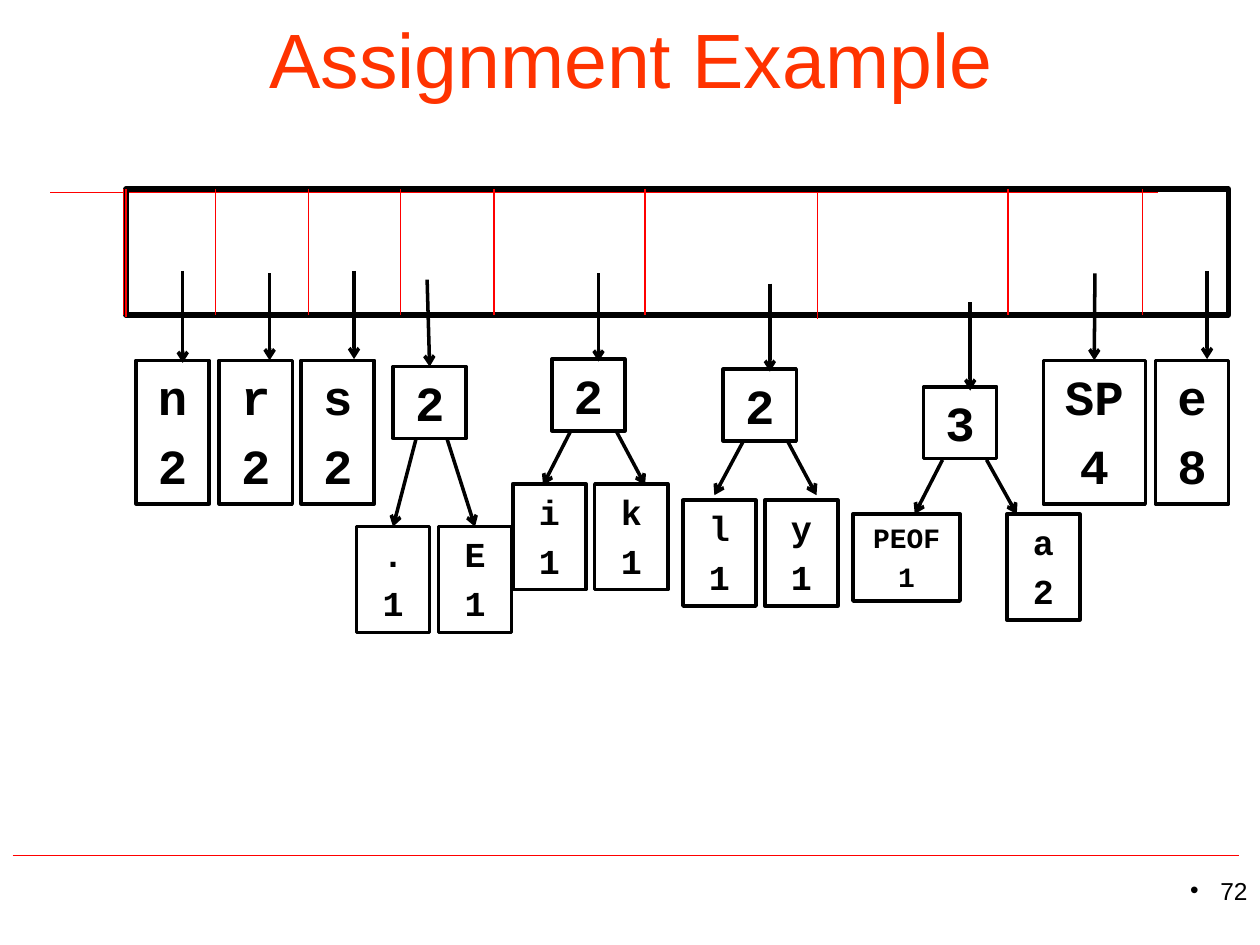
from lxml.etree import SubElement
from pptx import Presentation
from pptx.dml.color import RGBColor
from pptx.enum.shapes import MSO_CONNECTOR, MSO_SHAPE
from pptx.enum.text import MSO_ANCHOR, MSO_AUTO_SIZE, PP_ALIGN
from pptx.oxml.ns import qn
from pptx.util import Inches, Pt

COLORS = {"title": "FF3300", "rule": "FF0000", "ink": "000000"}
TITLE = "Assignment Example"
PAGE_NUMBER = "72"

RULES = [(0.4, 9.19, 1.53), (0.1, 9.83, 6.79)]  # left, right, y
QUEUE = (1, 1.5, 8.75, 1)
DIVIDERS = [(1, 1.5, 2.52), (6.49, 1.53, 2.53)] + [
    (x, 1.5, 2.5) for x in (0.98, 1.71, 2.45, 3.18, 3.92, 5.12, 8, 9.07)]

BOX_WIDTH = 0.58
WIDE_BOXES = {"SP": 0.81, "PEOF": 0.85}
ROOT_HEIGHT = 0.57
PAIR_HEIGHTS = {28: 1.14, 20: 0.84, 16: 0.69}  # by text size

# Queue entries: lines of text, left, top, arrow (x, start y, end y)
ENTRIES = [
    (("n", "2"), 1.08, 2.86, (1.45, 2.15, 2.88)),
    (("r", "2"), 1.74, 2.86, (2.14, 2.17, 2.86)),
    (("s", "2"), 2.39, 2.86, (2.81, 2.15, 2.85)),
    (("2",), 3.12, 2.91, (3.39, 2.22, 2.91)),
    (("2",), 4.38, 2.85, (4.75, 2.17, 2.87)),
    (("2",), 5.74, 2.93, (6.11, 2.25, 2.95)),
    (("3",), 7.33, 3.07, (7.7, 2.4, 3.1)),
    (("SP", "4"), 8.28, 2.86, (8.69, 2.17, 2.87)),
    (("e", "8"), 9.17, 2.86, (9.58, 2.15, 2.85)),
]
# Tree leaves: lines of text, left, top, text size, branch (x1, y1, x2, y2)
LEAVES = [
    ((".", "1"), 2.83, 4.18, 20, (3.3, 3.49, 3.12, 4.18)),
    (("E", "1"), 3.48, 4.18, 20, (3.55, 3.49, 3.79, 4.18)),
    (("i", "1"), 4.07, 3.84, 20, (4.53, 3.42, 4.31, 3.85)),
    (("k", "1"), 4.72, 3.84, 20, (4.89, 3.42, 5.12, 3.85)),
    (("l", "1"), 5.42, 3.97, 20, (5.9, 3.5, 5.67, 3.93)),
    (("y", "1"), 6.07, 3.97, 20, (6.25, 3.5, 6.48, 3.93)),
    (("PEOF", "1"), 6.77, 4.08, 16, (7.48, 3.65, 7.26, 4.08)),
    (("a", "2"), 7.99, 4.08, 20, (7.83, 3.65, 8.07, 4.08)),
]

prs = Presentation()
prs.slide_width, prs.slide_height = Inches(10), Inches(7.5)
slide = prs.slides.add_slide(prs.slide_layouts[6])


def color(name):
    return RGBColor.from_string(COLORS[name])


def format_paragraph(paragraph, align, size, font, ink="ink", bold=False):
    paragraph.alignment = align
    for run in paragraph.runs:
        run.font.size, run.font.name, run.font.bold = Pt(size), font, bold
        run.font.color.rgb = color(ink)


def add_line(x1, y1, x2, y2, ink="rule", width=0.75):
    line = slide.shapes.add_connector(
        MSO_CONNECTOR.STRAIGHT, *map(Inches, (x1, y1, x2, y2)))
    line.line.color.rgb = color(ink)
    line.line.width = Pt(width)
    SubElement(line._element.spPr, qn("a:effectLst"))
    return line


def add_arrow(x1, y1, x2, y2, target):
    """Draw an arrow, joined to the target if it ends at its top middle."""
    arrow = add_line(x1, y1, x2, y2, "ink", 2)
    SubElement(arrow.line._get_or_add_ln(), qn("a:tailEnd"), type="arrow")
    middle = target.left + target.width // 2
    if max(abs(Inches(x2) - middle), abs(Inches(y2) - target.top)) < Inches(0.03):
        arrow.end_connect(target, 0)


def add_frame(left, top, width, height, line_width):
    frame = slide.shapes.add_shape(
        MSO_SHAPE.RECTANGLE, *map(Inches, (left, top, width, height)))
    frame.shadow.inherit = False
    frame.fill.background()
    frame.line.color.rgb = color("ink")
    frame.line.width = Pt(line_width)
    return frame


def add_node(lines, left, top, size):
    width = WIDE_BOXES.get(lines[0], BOX_WIDTH)
    height = PAIR_HEIGHTS[size] if len(lines) == 2 else ROOT_HEIGHT
    node = add_frame(left, top, width, height, 2)
    frame = node.text_frame
    frame.text = "\n".join(lines)
    frame.word_wrap = True
    frame.auto_size = MSO_AUTO_SIZE.SHAPE_TO_FIT_TEXT
    frame.vertical_anchor = MSO_ANCHOR.TOP
    for paragraph in frame.paragraphs:
        format_paragraph(paragraph, PP_ALIGN.CENTER, size, "Courier New", bold=True)
        before = SubElement(paragraph._p.get_or_add_pPr(), qn("a:spcBef"))
        SubElement(before, qn("a:spcPct"), val="20000")
    return node


def add_label(text, box, align, size, ink, anchor):
    frame = slide.shapes.add_textbox(*map(Inches, box)).text_frame
    frame.word_wrap = True
    frame.vertical_anchor = anchor
    frame.text = text
    format_paragraph(frame.paragraphs[0], align, size, "Arial", ink)
    return frame.paragraphs[0]


for left, right, y in RULES:
    add_line(left, y, right, y)

add_label(TITLE, (0.76, -0.17, 8.5, 1.25), PP_ALIGN.CENTER, 44, "title", MSO_ANCHOR.MIDDLE)
page = add_label(PAGE_NUMBER, (7.67, 6.9, 2.33, 0.52), PP_ALIGN.RIGHT, 14, "ink", MSO_ANCHOR.TOP)
page_format = page._p.get_or_add_pPr()
page_format.set("marL", str(Inches(0.24)))
page_format.set("indent", str(Inches(-0.24)))
SubElement(page_format, qn("a:buFont"), typeface="Arial")
SubElement(page_format, qn("a:buChar"), char="•")

add_frame(*QUEUE, 3)
for x, top, bottom in DIVIDERS:
    add_line(x, top, x, bottom)

for lines, left, top, (x, start, end) in ENTRIES:
    add_arrow(x, start, x, end, add_node(lines, left, top, 28))
for lines, left, top, size, branch in LEAVES:
    add_arrow(*branch, add_node(lines, left, top, size))

prs.save("out.pptx")
